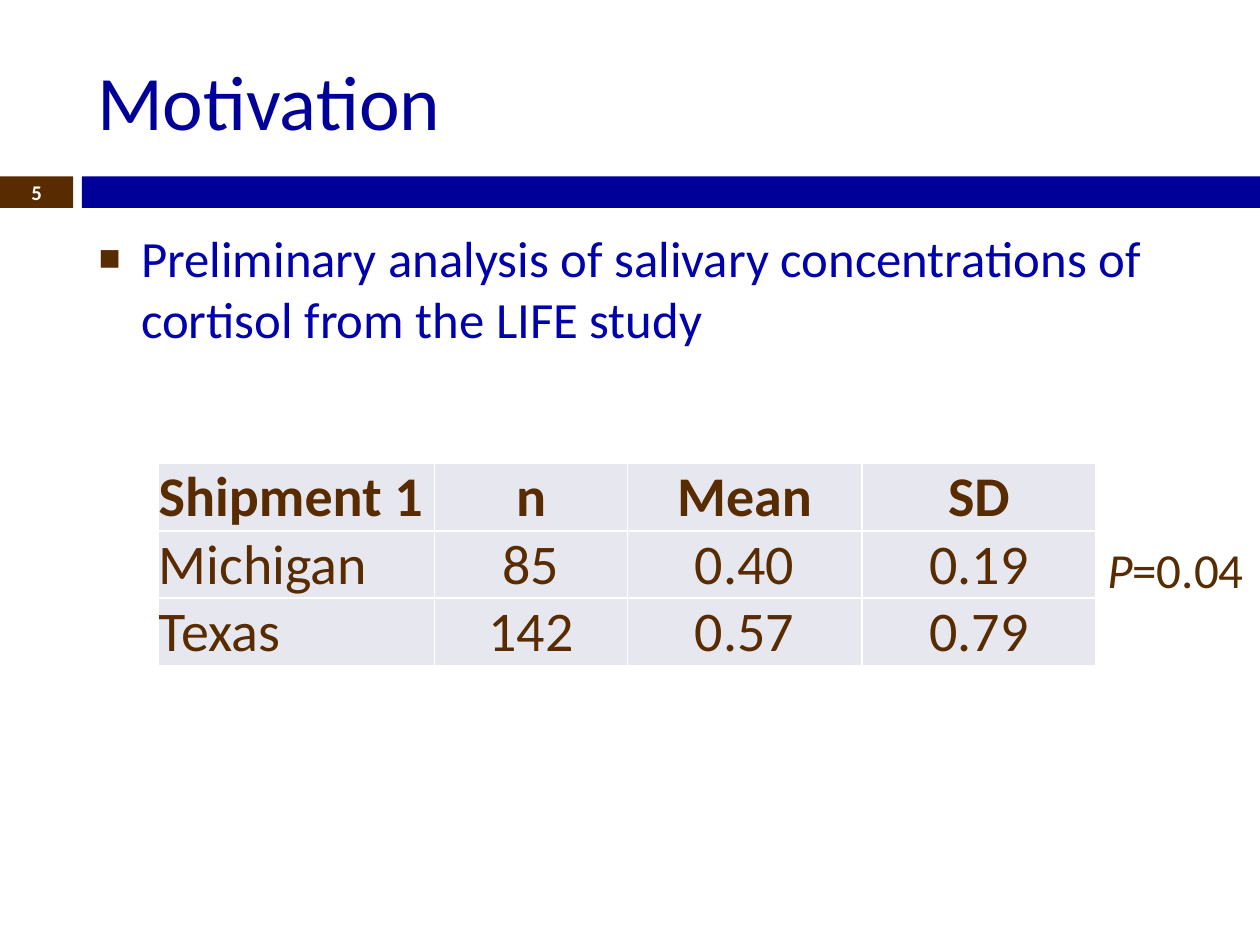
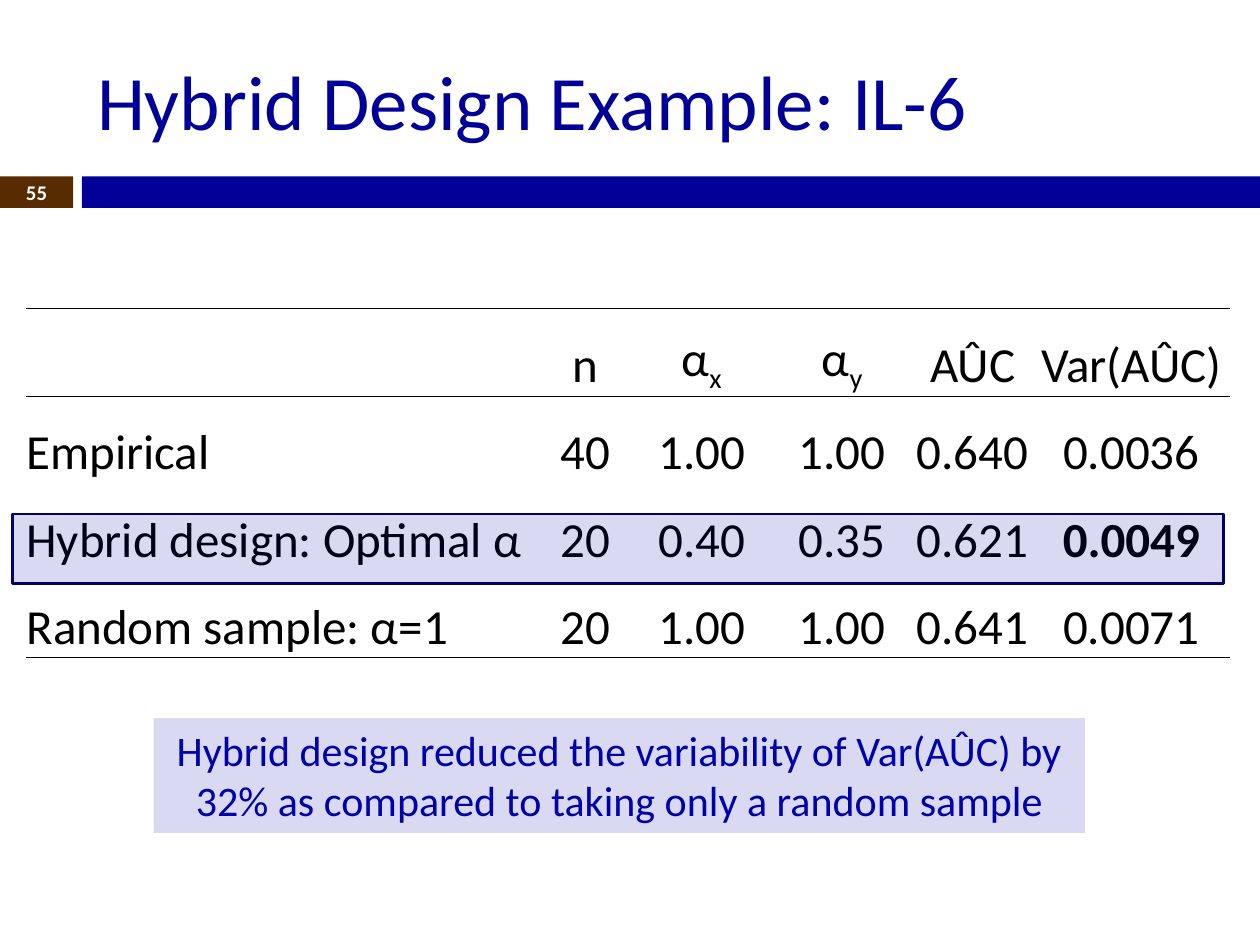
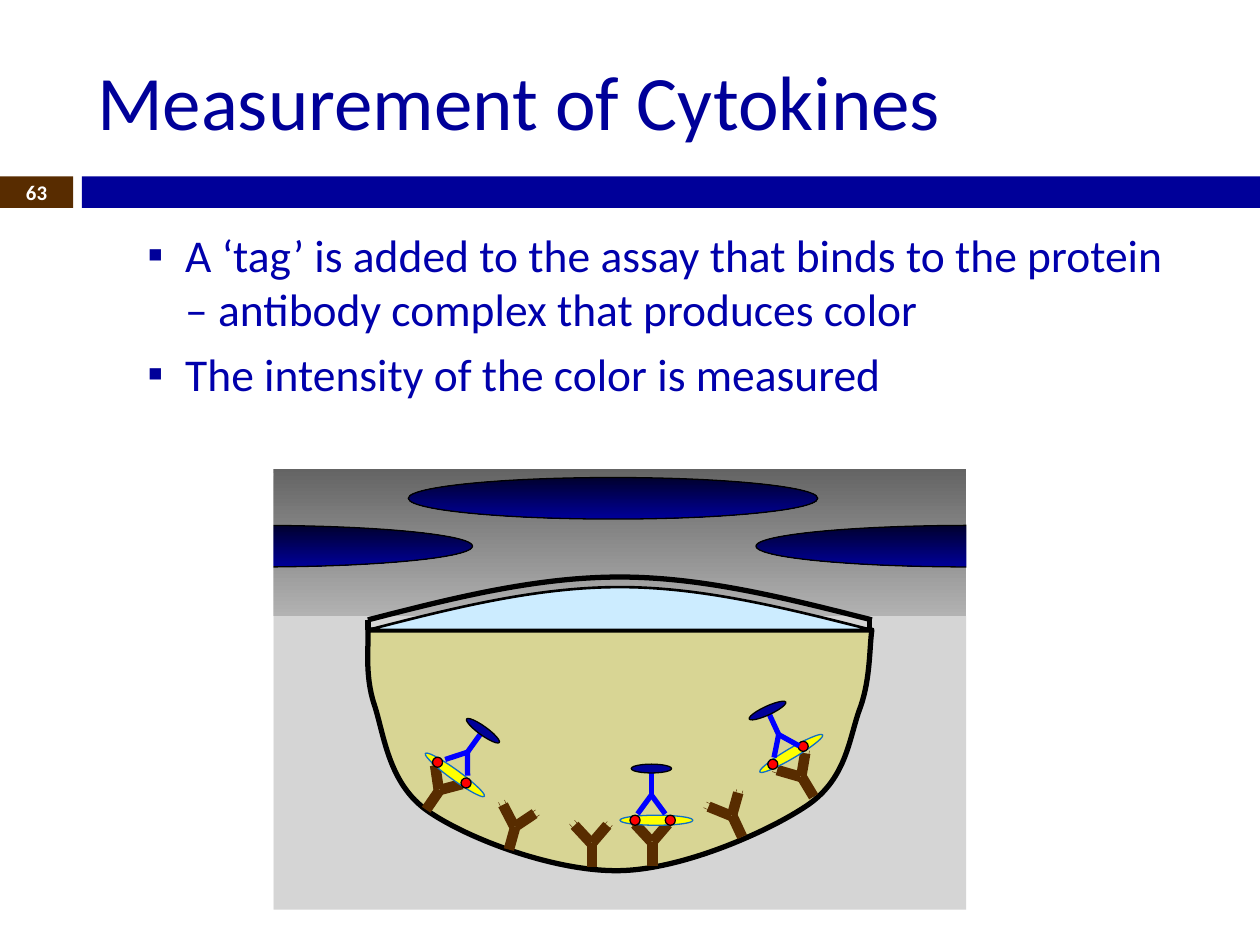
import math
from typing import NamedTuple, Optional

import lxml.etree
import pptx
import pptx.dml.color
import pptx.enum.dml
import pptx.enum.shapes
import pptx.enum.text
import pptx.oxml.ns
import pptx.util

RGBColor = pptx.dml.color.RGBColor
Shape = pptx.enum.shapes.MSO_SHAPE
Align = pptx.enum.text.PP_ALIGN
Anchor = pptx.enum.text.MSO_ANCHOR
AutoSize = pptx.enum.text.MSO_AUTO_SIZE
qn = pptx.oxml.ns.qn

SLIDE_WIDTH = pptx.util.Inches(10)
SLIDE_HEIGHT = pptx.util.Inches(7.5)
GRID_COLUMNS = 10
FONT = "Calibri"

BROWN = RGBColor(0x58, 0x2C, 0x00)
NAVY = RGBColor(0x00, 0x00, 0x99)
TEXT_BLUE = RGBColor(0x00, 0x00, 0xAC)
DARK_NAVY = RGBColor(0x00, 0x00, 0x71)
MIDNIGHT = RGBColor(0x00, 0x00, 0x2E)
BRIGHT_BLUE = RGBColor(0x00, 0x00, 0xFF)
RIM_BLUE = RGBColor(0x0F, 0x6F, 0xC6)
PALE_BLUE = RGBColor(0xCC, 0xEC, 0xFF)
TABLE_GRAY = RGBColor(0xE7, 0xE7, 0xEF)
DARK_GRAY = RGBColor(0x64, 0x64, 0x64)
MIDDLE_GRAY = RGBColor(0x96, 0x96, 0x96)
LIGHT_GRAY = RGBColor(0xB2, 0xB2, 0xB2)
YELLOW = RGBColor(0xFF, 0xFF, 0x00)
MUSTARD = RGBColor(0xE2, 0xD7, 0x00)
RED = RGBColor(0xFF, 0x00, 0x00)
BLACK = RGBColor(0x00, 0x00, 0x00)
WHITE = RGBColor(0xFF, 0xFF, 0xFF)


class Box(NamedTuple):
    left: float
    top: float
    width: float
    height: float

    def emu(self) -> list[int]:
        return [grid(length) for length in self]


class Point(NamedTuple):
    x: float
    y: float


class Pose(NamedTuple):
    x: float
    y: float
    angle: float = 0

    def place(self, x: float, y: float) -> Point:
        turn = math.radians(self.angle)
        return Point(self.x + x * math.cos(turn) - y * math.sin(turn),
                     self.y + x * math.sin(turn) + y * math.cos(turn))


class Stroke(NamedTuple):
    color: RGBColor
    points: float


class Segment(NamedTuple):
    start: Point
    end: Point
    points: float


class Span(NamedTuple):
    text: str
    bold: bool = False
    italic: bool = False
    subscript: bool = False


class TextStyle(NamedTuple):
    size: float
    color: RGBColor
    align: Align = Align.LEFT


class BulletStyle(NamedTuple):
    text: TextStyle
    level: int
    margin: float
    hanging: float
    space_before: float
    color: RGBColor
    percent: int


TITLE_BOX = Box(0.67, 0.25, 8.92, 1.08)
BODY_BOX = Box(0.67, 1.75, 8.92, 4.92)
NUMBER_BOX = Box(0, 1.39, 0.58, 0.27)
BANDS = ((Box(0, 1.4, 0.58, 0.25), BROWN), (Box(0.65, 1.4, 9.35, 0.25), NAVY))
TITLE_STYLE = TextStyle(44, NAVY)
NUMBER_STYLE = TextStyle(11.9, WHITE, Align.CENTER)
MAIN_BULLET = BulletStyle(TextStyle(29, TEXT_BLUE), 0, 0.35, 0.35, 7, BROWN, 140)
SUB_BULLET = BulletStyle(TextStyle(26, TEXT_BLUE), 1, 0.7, 0.3, 5.5, NAVY, 100)
THIN_BLACK = Stroke(BLACK, 0.75)

CAPTURE_ANTIBODY = (
    Segment(Point(0, 0), Point(0, 0.19), 6),
    Segment(Point(0.12, -0.14), Point(0, 0), 6),
    Segment(Point(-0.14, -0.14), Point(-0.01, 0), 6),
    Segment(Point(-0.18, -0.15), Point(-0.06, -0.01), 0.25),
    Segment(Point(-0.14, -0.18), Point(-0.01, -0.03), 0.25),
    Segment(Point(0.12, -0.17), Point(0, -0.03), 0.25),
    Segment(Point(0.16, -0.14), Point(0.04, 0), 0.25),
)
TAG_ANTIBODY = tuple(Segment(Point(0, 0), end, 3)
                     for end in (Point(0, -0.21), Point(-0.11, 0.15), Point(0.11, 0.15)))
CAPTURE_POSES = (Pose(4.7, 6.69), Pose(5.18, 6.68), Pose(5.81, 6.47, -25),
                 Pose(4.09, 6.56, 15.5), Pose(3.49, 6.27, 34.5), Pose(6.36, 6.16, -31))
PROTEIN_POSES = (Pose(3.61, 6.15, 36), Pose(6.28, 5.98, -30.5), Pose(5.21, 6.51))
TAG_POSES = (Pose(3.71, 5.97, 35.7), Pose(5.17, 6.31), Pose(6.18, 5.83, -24.8))

BOWL = ((2.92, 5), (2.93, 5.1), (2.89, 5.35), (2.97, 5.59), (3.05, 5.83), (3.08, 6.22),
        (3.4, 6.44), (3.72, 6.66), (4.41, 6.92), (4.92, 6.91), (5.42, 6.9), (6.1, 6.6),
        (6.41, 6.39), (6.73, 6.17), (6.74, 5.84), (6.83, 5.61), (6.91, 5.38), (6.9, 5.13),
        (6.92, 5))
RIM = ((2.92, 4.92), (3.58, 4.75), (4.25, 4.58), (4.92, 4.58), (5.58, 4.58), (6.25, 4.75),
       (6.92, 4.92))
SURFACE = tuple((x, y + 0.08) for x, y in RIM)


def grid(cells: float) -> int:
    return round(cells * SLIDE_WIDTH / GRID_COLUMNS)


def set_opacity(shape, percent: int) -> None:
    color = shape.element.spPr.find(qn("a:solidFill"))[0]
    lxml.etree.SubElement(color, qn("a:alpha"), val=str(percent * 1000))


def paint(shape, fill: Optional[RGBColor], stroke: Optional[Stroke] = None,
          opacity: int = 100) -> None:
    shape.shadow.inherit = False
    if fill is None:
        shape.fill.background()
    else:
        shape.fill.solid()
        shape.fill.fore_color.rgb = fill
        if opacity < 100:
            set_opacity(shape, opacity)
    if stroke is None:
        shape.line.fill.background()
    else:
        shape.line.color.rgb = stroke.color
        shape.line.width = pptx.util.Pt(stroke.points)


def draw_shape(shapes, kind: Shape, box: Box, fill: RGBColor,
               stroke: Optional[Stroke] = None, opacity: int = 100):
    shape = shapes.add_shape(kind, *box.emu())
    paint(shape, fill, stroke, opacity)
    return shape


def shade_downward(shape, top: RGBColor, bottom: RGBColor) -> None:
    shape.fill.gradient()
    shape.fill.gradient_angle = 270
    for stop, color, position in zip(shape.fill.gradient_stops, (top, bottom), (0, 1)):
        stop.color.rgb = color
        stop.position = position


def draw_line(shapes, start: Point, end: Point, stroke: Stroke) -> None:
    connector = shapes.add_connector(pptx.enum.shapes.MSO_CONNECTOR.STRAIGHT,
                                     *(grid(length) for length in (*start, *end)))
    connector.line.color.rgb = stroke.color
    connector.line.width = pptx.util.Pt(stroke.points)
    lxml.etree.SubElement(connector.element.spPr, qn("a:effectLst"))


def draw_ellipse(shapes, center: Point, width: float, height: float, angle: float,
                 fill: RGBColor, stroke: Stroke = THIN_BLACK) -> None:
    box = Box(center.x - width / 2, center.y - height / 2, width, height)
    draw_shape(shapes, Shape.OVAL, box, fill, stroke).rotation = angle


def bend_segments(shape) -> None:
    segments = list(shape.element.iter(qn("a:lnTo")))
    for first in range(0, len(segments), 3):
        curve = lxml.etree.Element(qn("a:cubicBezTo"))
        segments[first].addprevious(curve)
        for segment in segments[first:first + 3]:
            curve.append(segment[0])
            segment.getparent().remove(segment)


def draw_curve(shapes, controls: tuple, fill: Optional[RGBColor], stroke: Stroke,
               opacity: int = 100) -> None:
    points = [(grid(x), grid(y)) for x, y in controls]
    builder = shapes.build_freeform(*points[0], scale=1.0)
    builder.add_line_segments(points[1:], close=fill is not None)
    shape = builder.convert_to_shape()
    bend_segments(shape)
    paint(shape, fill, stroke, opacity)


def write(paragraph, spans: list[Span], style: TextStyle) -> None:
    paragraph.alignment = style.align
    for span in spans:
        run = paragraph.add_run()
        run.text = span.text
        run.font.name = FONT
        run.font.size = pptx.util.Pt(style.size)
        run.font.color.rgb = style.color
        run.font.bold = span.bold
        run.font.italic = span.italic
        if span.subscript:
            run.font._element.set("baseline", "-25000")


def add_label(slide, box: Box, spans: list[Span], style: TextStyle,
              anchor: Anchor = Anchor.TOP) -> None:
    frame = slide.shapes.add_textbox(*box.emu()).text_frame
    frame.word_wrap = True
    frame.vertical_anchor = anchor
    write(frame.paragraphs[0], spans, style)


def add_bullets(slide, texts: list[str], style: BulletStyle) -> None:
    frame = slide.placeholders[1].text_frame
    for index, text in enumerate(texts):
        paragraph = frame.add_paragraph() if index else frame.paragraphs[0]
        paragraph.level = style.level
        paragraph.space_before = pptx.util.Pt(style.space_before)
        write(paragraph, [Span(text)], style.text)
        properties = paragraph._p.get_or_add_pPr()
        properties.set("marL", str(grid(style.margin)))
        properties.set("indent", str(-grid(style.hanging)))
        color = lxml.etree.SubElement(properties, qn("a:buClr"))
        lxml.etree.SubElement(color, qn("a:srgbClr"), val=str(style.color))
        lxml.etree.SubElement(properties, qn("a:buSzPct"), val=str(style.percent * 1000))
        lxml.etree.SubElement(properties, qn("a:buChar"), char="▪")


def set_borders(cell, strokes: dict[str, Optional[Stroke]]) -> None:
    properties = cell._tc.get_or_add_tcPr()
    for index, side in enumerate("LRTB"):
        stroke = strokes.get(side)
        border = lxml.etree.Element(qn(f"a:ln{side}"))
        if stroke is None:
            lxml.etree.SubElement(border, qn("a:noFill"))
        else:
            border.set("w", str(pptx.util.Pt(stroke.points)))
            fill = lxml.etree.SubElement(border, qn("a:solidFill"))
            lxml.etree.SubElement(fill, qn("a:srgbClr"), val=str(stroke.color))
        properties.insert(index, border)


def add_data_table(slide, box: Box, widths: list[float], rows: list[list[str]],
                   style: TextStyle, bold_cells: set[tuple[int, int]],
                   fill: Optional[RGBColor], borders: list[dict]) -> None:
    table = slide.shapes.add_table(len(rows), len(widths), *box.emu()).table
    table.first_row = table.horz_banding = False
    for column, width in zip(table.columns, widths):
        column.width = grid(width)
    for row_index, texts in enumerate(rows):
        table.rows[row_index].height = grid(box.height / len(rows))
        for column_index, text in enumerate(texts):
            cell = table.cell(row_index, column_index)
            cell.margin_left = cell.margin_right = cell.margin_top = cell.margin_bottom = 0
            cell.vertical_anchor = Anchor.BOTTOM
            if fill is None:
                cell.fill.background()
            else:
                cell.fill.solid()
                cell.fill.fore_color.rgb = fill
            set_borders(cell, borders[row_index])
            base, _, subscript = text.partition("_")
            bold = (row_index, column_index) in bold_cells
            spans = [Span(base, bold)] if base else []
            if subscript:
                spans.append(Span(subscript, bold, subscript=True))
            align = Align.CENTER if column_index else Align.LEFT
            write(cell.text_frame.paragraphs[0], spans, style._replace(align=align))


def add_bands_to_master(presentation, slide) -> None:
    first_placeholder = presentation.slide_master.placeholders[0].element
    for index, (box, color) in enumerate(BANDS):
        band = draw_shape(slide.shapes, Shape.RECTANGLE, box, color).element
        band.nvSpPr.cNvPr.set("id", str(20 + index))
        first_placeholder.addprevious(band)


def start_slide(presentation, layout_index: int, title: str, number: int):
    slide = presentation.slides.add_slide(presentation.slide_layouts[layout_index])
    for placeholder, box in zip(slide.placeholders, (TITLE_BOX, BODY_BOX)):
        placeholder.left, placeholder.top, placeholder.width, placeholder.height = box.emu()
    frame = slide.shapes.title.text_frame
    frame.vertical_anchor = Anchor.MIDDLE
    write(frame.paragraphs[0], [Span(title)], TITLE_STYLE)
    add_label(slide, NUMBER_BOX, [Span(str(number), bold=True)], NUMBER_STYLE, Anchor.MIDDLE)
    return slide


def build_motivation(presentation) -> None:
    slide = start_slide(presentation, 1, "Motivation", 5)
    add_bands_to_master(presentation, slide)
    add_bullets(slide, ["Preliminary analysis of salivary concentrations of cortisol "
                        "from the LIFE study"], MAIN_BULLET)
    add_label(slide, Box(8.66, 4.23, 1.34, 0.57), [Span("P", italic=True), Span("=0.04")],
              TextStyle(28, BROWN, Align.CENTER))
    rows = [["Shipment 1", "n", "Mean", "SD"],
            ["Michigan", "85", "0.40", "0.19"],
            ["Texas", "142", "0.57", "0.79"]]
    add_data_table(slide, Box(1.26, 3.68, 7.44, 1.6), [2.19, 1.53, 1.86, 1.86], rows,
                   TextStyle(32, BROWN), {(0, column) for column in range(4)}, TABLE_GRAY,
                   [dict.fromkeys("LRTB", Stroke(WHITE, 1))] * len(rows))


def build_hybrid_example(presentation) -> None:
    slide = start_slide(presentation, 5, "Hybrid Design Example: IL-6", 55)
    rule = Stroke(BLACK, 0.5)
    rows = [["", "n", "α_x", "α_y", "AÛC", "Var(AÛC)"],
            ["Empirical", "40", "1.00", "1.00", "0.640", "0.0036"],
            ["Hybrid design: Optimal α", "20", "0.40", "0.35", "0.621", "0.0049"],
            ["Random sample: α=1", "20", "1.00", "1.00", "0.641", "0.0071"]]
    add_data_table(slide, Box(0.21, 2.45, 9.55, 2.77), [4.07, 0.73, 1.12, 1.11, 0.96, 1.56],
                   rows, TextStyle(28, BLACK), {(2, 5)}, None,
                   [{"T": rule, "B": rule}, {"T": rule}, {}, {"B": rule}])
    conclusion = draw_shape(slide.shapes, Shape.RECTANGLE, Box(1.22, 5.7, 7.39, 0.91),
                            TEXT_BLUE, opacity=15)
    conclusion.text_frame.word_wrap = True
    conclusion.text_frame.auto_size = AutoSize.SHAPE_TO_FIT_TEXT
    conclusion.text_frame.vertical_anchor = Anchor.TOP
    write(conclusion.text_frame.paragraphs[0],
          [Span("Hybrid design reduced the variability of Var(AÛC) by 32% as compared "
                "to taking only a random sample")], TextStyle(24, TEXT_BLUE, Align.CENTER))
    draw_shape(slide.shapes, Shape.RECTANGLE, Box(0.1, 4.08, 9.61, 0.55), TEXT_BLUE,
               Stroke(DARK_NAVY, 1.5), opacity=15)


def draw_antibody(shapes, pose: Pose, segments: tuple[Segment, ...], color: RGBColor):
    group = shapes.add_group_shape()
    for segment in segments:
        draw_line(group.shapes, pose.place(*segment.start), pose.place(*segment.end),
                  Stroke(color, segment.points))
    return group


def draw_protein(shapes, pose: Pose) -> None:
    group = shapes.add_group_shape()
    draw_ellipse(group.shapes, Point(pose.x, pose.y), 0.58, 0.08, pose.angle, YELLOW,
                 Stroke(RIM_BLUE, 0.75))
    for offset in (-0.17, 0.11):
        draw_ellipse(group.shapes, pose.place(offset, 0), 0.08, 0.08, pose.angle, RED)


def build_cytokines(presentation) -> None:
    slide = start_slide(presentation, 1, "Measurement of Cytokines", 63)
    add_bullets(slide, ["A ‘tag’ is added to the assay that binds to the protein – antibody "
                        "complex that produces color",
                        "The intensity of the color is measured"], SUB_BULLET)
    shapes = slide.shapes
    plate = draw_shape(shapes, Shape.RECTANGLE, Box(2.17, 3.72, 5.5, 1.17), DARK_GRAY)
    shade_downward(plate, DARK_GRAY, LIGHT_GRAY)
    draw_shape(shapes, Shape.RECTANGLE, Box(2.17, 4.89, 5.5, 2.33), MIDDLE_GRAY, opacity=40)
    wall = Stroke(BLACK, 3)
    draw_curve(shapes, BOWL, MUSTARD, wall, opacity=30)
    draw_curve(shapes, RIM, None, wall)
    for x in (2.92, 6.9):
        draw_line(shapes, Point(x, 4.92), Point(x, 5), wall)
    for pose in CAPTURE_POSES:
        draw_antibody(shapes, pose, CAPTURE_ANTIBODY, BROWN)
    for pose in PROTEIN_POSES:
        draw_protein(shapes, pose)
    for pose in TAG_POSES:
        tag = draw_antibody(shapes, pose, TAG_ANTIBODY, BRIGHT_BLUE)
        draw_ellipse(tag.shapes, pose.place(0, -0.21), 0.32, 0.07, pose.angle, NAVY)
    draw_curve(shapes, SURFACE, PALE_BLUE, Stroke(BLACK, 1.5))
    for box in (Box(6, 4.17, 3.42, 0.33), Box(3.24, 3.79, 3.25, 0.33),
                Box(0.33, 4.17, 3.42, 0.33)):
        well = draw_shape(shapes, Shape.OVAL, box, NAVY, THIN_BLACK)
        shade_downward(well, MIDNIGHT, NAVY)
    for left in (0.25, 7.67):
        draw_shape(shapes, Shape.RECTANGLE, Box(left, 3.75, 1.92, 3.5), WHITE)


def main() -> None:
    presentation = pptx.Presentation()
    presentation.slide_width = SLIDE_WIDTH
    presentation.slide_height = SLIDE_HEIGHT
    build_motivation(presentation)
    build_hybrid_example(presentation)
    build_cytokines(presentation)
    presentation.save("out.pptx")


if __name__ == "__main__":
    main()
